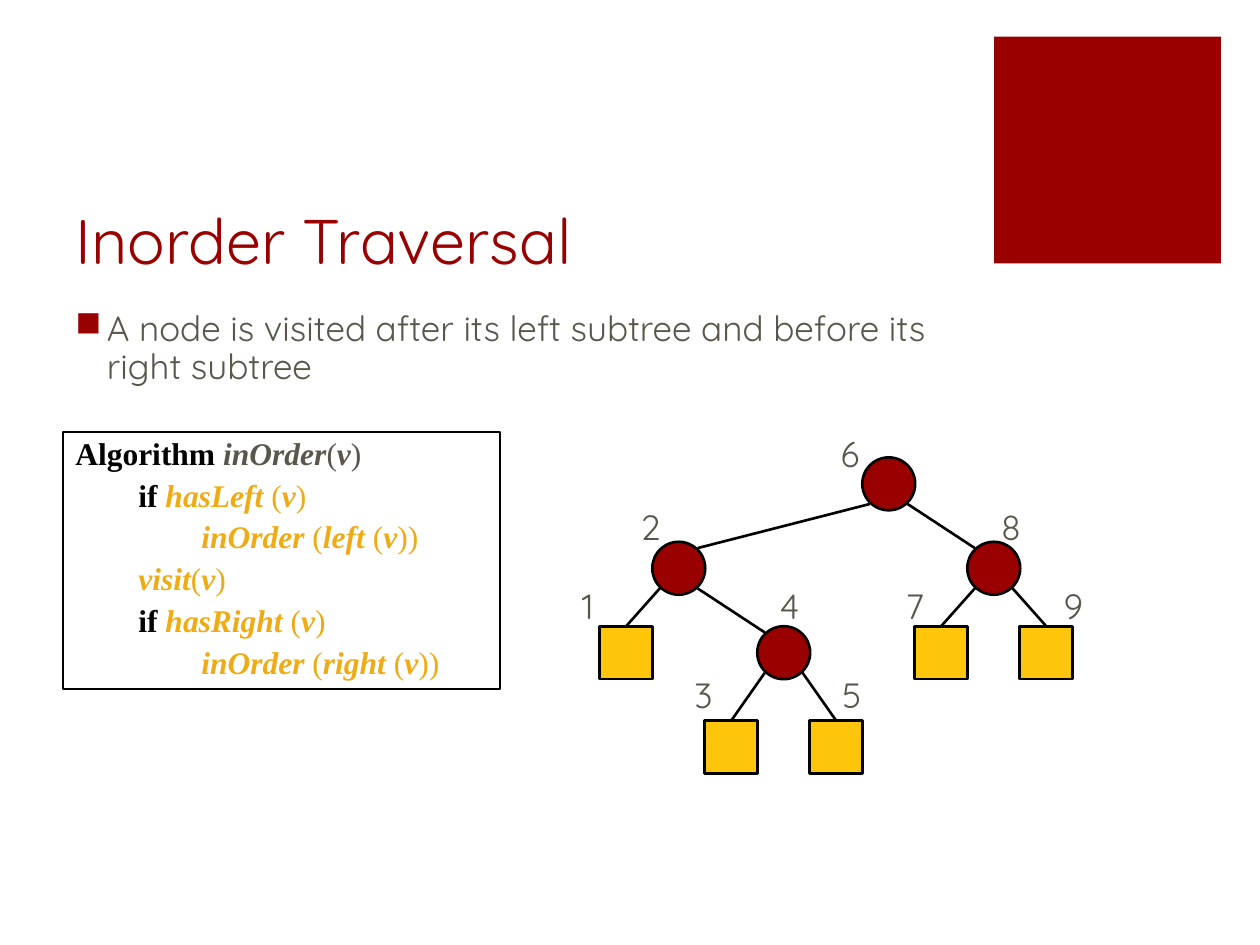
from lxml.etree import SubElement
from pptx import Presentation
from pptx.dml.color import RGBColor
from pptx.enum.shapes import MSO_CONNECTOR, MSO_SHAPE
from pptx.enum.text import MSO_ANCHOR, MSO_AUTO_SIZE, PP_ALIGN
from pptx.oxml.ns import qn
from pptx.util import Pt

RED, GOLD, ORANGE, GREY, BLACK = "990000", "FEC60B", "EFAB16", "59564B", "000000"

deck = Presentation()
deck.slide_width, deck.slide_height = 9144000, 6858000
CELL = deck.slide_width // 10  # the slide is a grid of 10 columns by 7.5 rows
slide = deck.slides.add_slide(deck.slide_layouts[5])


def cells(*counts):
    """Turn counts of grid cells into lengths."""
    return [round(count * CELL) for count in counts]


def style(font, size, colour, name="Quicksand"):
    font.size, font.name = Pt(size), name
    font.color.rgb = RGBColor.from_string(colour)


# Corner block
corner = slide.shapes.add_shape(MSO_SHAPE.RECTANGLE, *cells(7.89, 0.29, 1.8, 1.8))
corner.shadow.inherit = False
corner.fill.solid()
corner.fill.fore_color.rgb = RGBColor.from_string(RED)
corner.line.fill.background()

# Title
title = slide.shapes.title
title.left, title.top, title.width, title.height = cells(0.5, 1, 7.12, 1.25)
title.text_frame.text = "Inorder Traversal"
title.text_frame.vertical_anchor = MSO_ANCHOR.BOTTOM
title.text_frame.auto_size = MSO_AUTO_SIZE.NONE
para = title.text_frame.paragraphs[0]
para.alignment = PP_ALIGN.LEFT
style(para.font, 36, RED)

# Definition with a square bullet
body = slide.shapes.add_textbox(*cells(0.5, 2.42, 7.49, 4.28))
body.text_frame.word_wrap = True
para = body.text_frame.paragraphs[0]
para.text = "A node is visited after its left subtree and before its right subtree"
para.line_spacing, para.space_before = 0.9, Pt(18)
style(para.font, 20, GREY)
properties = para._p.get_or_add_pPr()
indent = CELL // 4
properties.set("marL", str(indent))
properties.set("indent", str(-indent))
bullet_colour = SubElement(properties, qn("a:buClr"))
SubElement(bullet_colour, qn("a:srgbClr"), val=RED)
SubElement(properties, qn("a:buChar"), char="■")
properties.append(properties.find(qn("a:defRPr")))  # defaults come after bullets

# Pseudocode: level, keyword, colour, then names and symbols in turn
code_lines = [
    (0, "Algorithm ", GREY, ["inOrder", "(", "v", ")"]),
    (1, "if ", ORANGE, ["hasLeft ", "(", "v", ")"]),
    (2, "", ORANGE, ["inOrder", " (", "left ", "(", "v", "))"]),
    (1, "", ORANGE, ["visit", "(", "v", ")"]),
    (1, "if ", ORANGE, ["hasRight ", "(", "v", ")"]),
    (2, "", ORANGE, ["inOrder", " (", "right ", "(", "v", "))"]),
]
code = slide.shapes.add_textbox(*cells(0.5, 3.43, 3.47, 2.04))
code.line.color.rgb = RGBColor.from_string(BLACK)
code.line.width = Pt(0.75)
frame = code.text_frame
frame.word_wrap = True
for number, (level, keyword, colour, parts) in enumerate(code_lines):
    para = frame.add_paragraph() if number else frame.paragraphs[0]
    para.level, para.line_spacing, para.space_before = level, 0.9, Pt(4.4)
    para._p.get_or_add_pPr().set("marL", str(level * CELL // 2))
    style(para.font, 18, colour, "Times New Roman")
    if keyword:
        span = para.add_run()
        span.text = keyword
        style(span.font, 18, BLACK, "Times New Roman")
        span.font.bold = True
    for position, part in enumerate(parts):
        span = para.add_run()
        span.text = part
        style(span.font, 18, colour, "Times New Roman")
        span.font.bold = span.font.italic = position % 2 == 0

# Tree: the inorder number of a node is also its column
FIRST_CENTRE, PITCH, NODE = 4.97, 5 / 12, 0.42
NODE_TOPS = [3.63, 4.3, 4.97, 5.72]
LABEL_TOPS = [3.38, 3.96, 4.59, 5.3]
depths = {1: 2, 2: 1, 3: 3, 4: 2, 5: 3, 6: 0, 7: 2, 8: 1, 9: 2}
children = {6: (2, 8), 2: (1, 4), 4: (3, 5), 8: (7, 9)}
label_shifts = {1: -0.45, 2: -0.4, 3: -0.39, 4: -0.13, 5: -0.05,
                6: -0.48, 7: -0.38, 8: -0.04, 9: 0.04}
centres = {node: (FIRST_CENTRE + (node - 1) * PITCH, NODE_TOPS[depth] + NODE / 2)
           for node, depth in depths.items()}

tree = slide.shapes.add_group_shape()
for node, (x, y) in centres.items():
    inner = node in children
    shape = tree.shapes.add_shape(MSO_SHAPE.OVAL if inner else MSO_SHAPE.RECTANGLE,
                                  *cells(x - NODE / 2, y - NODE / 2, NODE, NODE))
    shape.shadow.inherit = False
    shape.fill.solid()
    shape.fill.fore_color.rgb = RGBColor.from_string(RED if inner else GOLD)
    shape.line.color.rgb = RGBColor.from_string(BLACK)
    shape.line.width = Pt(1.5)

RIM_X, RIM_Y = 0.15, 0.16  # where edges meet a circle, from its centre
for parent, pair in children.items():
    for child, side in zip(pair, (-1, 1)):
        x, y = centres[parent]
        child_x, child_y = centres[child]
        if child in children:
            child_x, child_y = child_x - side * RIM_X, child_y - RIM_Y
        else:
            child_y -= NODE / 2
        edge = tree.shapes.add_connector(
            MSO_CONNECTOR.STRAIGHT,
            *cells(x + side * RIM_X, y + RIM_Y, child_x, child_y))
        edge.line.color.rgb = RGBColor.from_string(BLACK)
        edge.line.width = Pt(1.5)
        SubElement(edge._element.spPr, qn("a:effectLst"))

for node, shift in label_shifts.items():
    label = slide.shapes.add_textbox(
        *cells(centres[node][0] + shift, LABEL_TOPS[depths[node]], 0.35, 0.43))
    label.text_frame.word_wrap = False
    label.text_frame.auto_size = MSO_AUTO_SIZE.SHAPE_TO_FIT_TEXT
    para = label.text_frame.paragraphs[0]
    para.text = str(node)
    style(para.font, 20, GREY)

deck.save("out.pptx")
